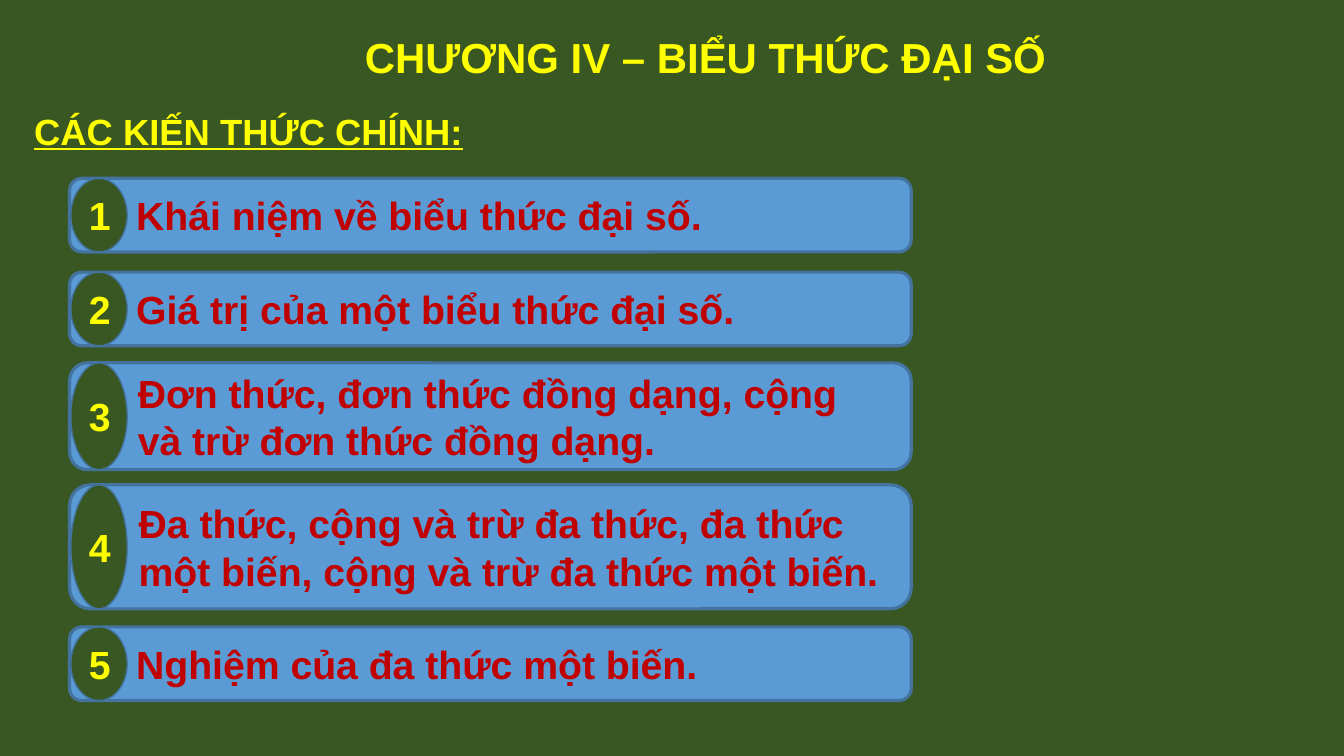
import pptx
import pptx.dml.color
import pptx.enum.shapes
import pptx.enum.text
import pptx.util

Pt = pptx.util.Pt
SHAPES = pptx.enum.shapes.MSO_SHAPE
ANCHOR = pptx.enum.text.MSO_ANCHOR
ALIGN = pptx.enum.text.PP_ALIGN

BOARD = "385723"
YELLOW = "FFFF00"
RED = "C00000"
BLUE = "5B9BD5"
OUTLINE = "43739E"

TOPICS = [
    (127.4, 52.6, "Khái niệm về biểu thức đại số."),
    (194.4, 52.6, "Giá trị của một biểu thức đại số."),
    (259.2, 76.3, "Đơn thức, đơn thức đồng dạng, cộng\nvà trừ đơn thức đồng dạng."),
    (346.3, 88.6, "Đa thức, cộng và trừ đa thức, đa thức\nmột biến, cộng và trừ đa thức một biến."),
    (447.8, 52.6, "Nghiệm của đa thức một biến."),
]


def color(hex_string):
    return pptx.dml.color.RGBColor.from_string(hex_string)


def write_text(shape, text, size=28, ink=YELLOW, underline=False,
               align=ALIGN.LEFT, anchor=ANCHOR.MIDDLE, wrap=True, margin_left=7.2):
    frame = shape.text_frame
    frame.text = text
    frame.word_wrap = wrap
    frame.auto_size = pptx.enum.text.MSO_AUTO_SIZE.NONE
    frame.vertical_anchor = anchor
    frame.margin_left = Pt(margin_left)
    for paragraph in frame.paragraphs:
        paragraph.alignment = align
        font = paragraph.runs[0].font
        font.name = "Arial"
        font.size = Pt(size)
        font.bold = True
        font.underline = underline
        font.color.rgb = color(ink)


def add_title(slide, text):
    title = slide.shapes.title
    title.left, title.top, title.width, title.height = Pt(253.4), Pt(18.7), Pt(506.2), Pt(43.9)
    write_text(title, text, size=30, anchor=ANCHOR.TOP, wrap=False)


def add_heading(slide, text):
    heading = slide.shapes.add_textbox(Pt(17.3), Pt(74.2), Pt(331.2), Pt(38.9))
    write_text(heading, text, size=26, underline=True, anchor=ANCHOR.TOP, wrap=False)


def add_panel(slide, kind, left, top, width, height, fill, line_width):
    shape = slide.shapes.add_shape(kind, Pt(left), Pt(top), Pt(width), Pt(height))
    shape.shadow.inherit = False
    shape.fill.solid()
    shape.fill.fore_color.rgb = color(fill)
    shape.line.color.rgb = color(OUTLINE)
    shape.line.width = Pt(line_width)
    return shape


def add_topic(slide, number, top, height, text):
    bar = add_panel(slide, SHAPES.ROUNDED_RECTANGLE, 49.7, top, 601.2, height, BLUE, 2.25)
    write_text(bar, text, ink=RED, margin_left=45)
    badge = add_panel(slide, SHAPES.OVAL, 50.6, top, 40.3, height, BOARD, 1)
    write_text(badge, str(number), align=ALIGN.CENTER)


def main():
    presentation = pptx.Presentation()
    presentation.slide_width = Pt(960)
    presentation.slide_height = Pt(540)
    slide = presentation.slides.add_slide(presentation.slide_layouts[5])
    slide.background.fill.solid()
    slide.background.fill.fore_color.rgb = color(BOARD)
    add_title(slide, "CHƯƠNG IV – BIỂU THỨC ĐẠI SỐ")
    add_heading(slide, "CÁC KIẾN THỨC CHÍNH:")
    for number, (top, height, text) in enumerate(TOPICS, start=1):
        add_topic(slide, number, top, height, text)
    presentation.save("out.pptx")


if __name__ == "__main__":
    main()
